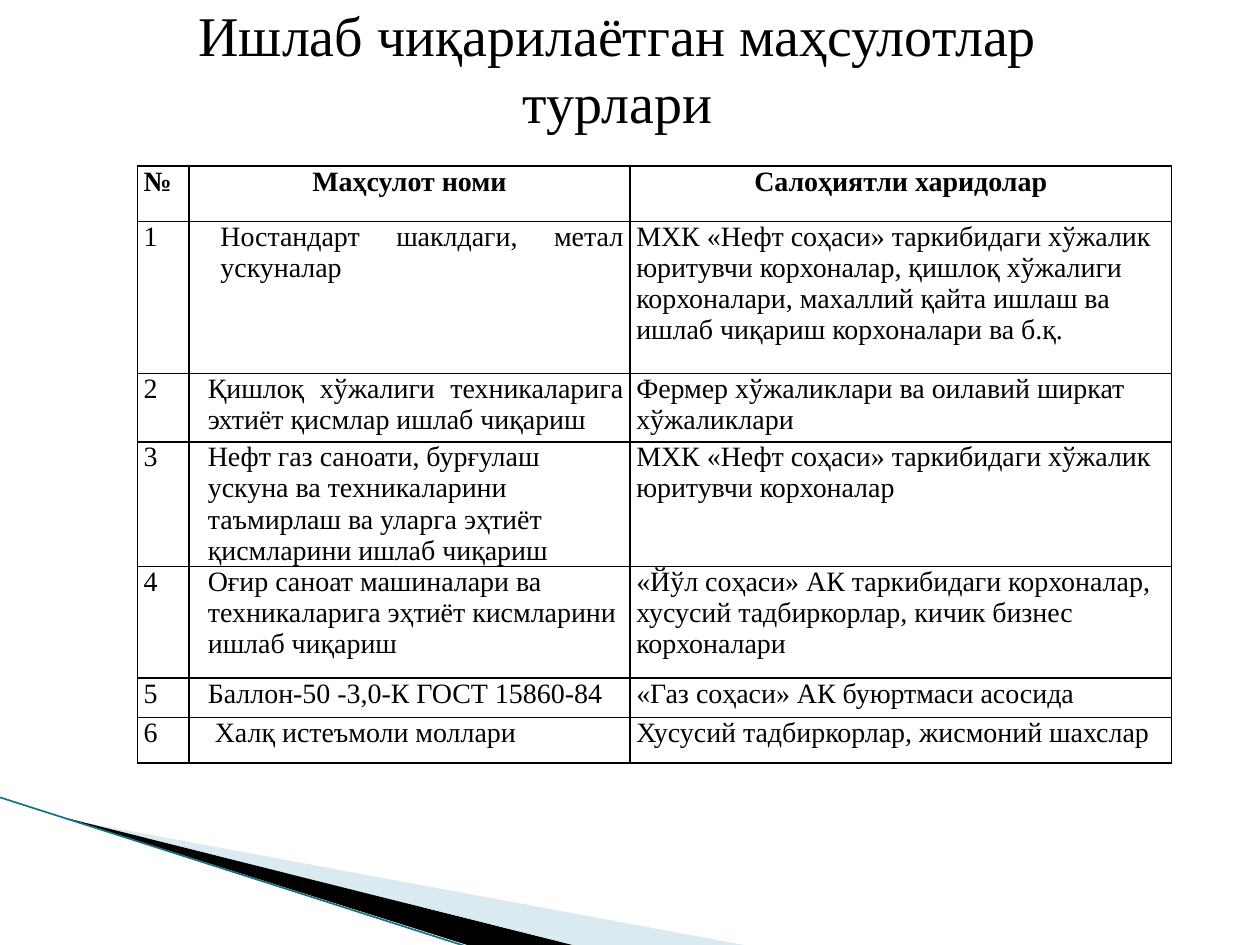
"""Build a slide with a table of products and their potential buyers."""
import pptx
import pptx.dml.color
import pptx.enum.shapes
import pptx.enum.text
import pptx.oxml
import pptx.oxml.ns
import pptx.util

Pt = pptx.util.Pt
RGBColor = pptx.dml.color.RGBColor
ALIGN = pptx.enum.text.PP_ALIGN
BLACK = RGBColor(0x00, 0x00, 0x00)
WHITE = RGBColor(0xFF, 0xFF, 0xFF)
PALE_BLUE = RGBColor(0xA0, 0xCB, 0xDC)
TEAL = RGBColor(0x17, 0x70, 0x8A)
NAMESPACE = pptx.oxml.ns.nsdecls("a")

COLUMN_WIDTHS = (29.5, 252, 309.5)
ROW_HEIGHTS = (31.5, 87, 39, 58, 64, 22.5, 26)
HEADINGS = ("№", "Маҳсулот номи", "Салоҳиятли харидолар")
PRODUCTS = (
    ("Ностандарт шаклдаги, метал ускуналар", ALIGN.JUSTIFY, 14.4,
     "МХК «Нефт соҳаси» таркибидаги хўжалик юритувчи корхоналар, "
     "қишлоқ хўжалиги корхоналари, махаллий қайта ишлаш ва "
     "ишлаб чиқариш корхоналари ва б.қ."),
    ("Қишлоқ хўжалиги техникаларига эхтиёт қисмлар ишлаб чиқариш",
     ALIGN.JUSTIFY, 7.2, "Фермер хўжаликлари ва оилавий ширкат хўжаликлари"),
    ("Нефт газ саноати, бурғулаш ускуна ва техникаларини таъмирлаш "
     "ва уларга эҳтиёт қисмларини ишлаб чиқариш", ALIGN.LEFT, 7.2,
     "МХК «Нефт соҳаси» таркибидаги хўжалик юритувчи корхоналар"),
    ("Оғир саноат машиналари ва техникаларига эҳтиёт кисмларини "
     "ишлаб чиқариш", ALIGN.LEFT, 7.2,
     "«Йўл соҳаси» АК таркибидаги корхоналар,\n"
     "хусусий тадбиркорлар, кичик бизнес корхоналари"),
    ("Баллон-50 -3,0-К ГОСТ 15860-84", ALIGN.LEFT, 7.2,
     "«Газ соҳаси» АК буюртмаси асосида"),
    ("Халқ истеъмоли моллари", ALIGN.JUSTIFY, 11.2,
     "Хусусий тадбиркорлар, жисмоний шахслар"),
)


class SlideBuilder:
    """Hold the text style and the current slide."""

    font_name = "Times New Roman"
    title_size = 32
    table_size = 16

    def __init__(self, slide):
        self.slide = slide

    def format_text(self, text_frame, size, align, bold=False, indent=0):
        """Apply the shared style to every paragraph."""
        for paragraph in text_frame.paragraphs:
            paragraph.alignment = align
            if indent:
                properties = paragraph._p.get_or_add_pPr()
                properties.set("marL", str(Pt(indent)))
                properties.set("indent", "0")
            for run in paragraph.runs:
                run.font.name = self.font_name
                run.font.size = Pt(size)
                run.font.bold = bold
                run.font.color.rgb = BLACK

    def add_title(self, text, left, top, width, height):
        """Place and format the title placeholder."""
        title = self.slide.shapes.title
        title.left, title.top = Pt(left), Pt(top)
        title.width, title.height = Pt(width), Pt(height)
        title.text_frame.text = text
        title.text_frame.word_wrap = True
        title.text_frame.auto_size = pptx.enum.text.MSO_AUTO_SIZE.NONE
        title.text_frame.vertical_anchor = pptx.enum.text.MSO_ANCHOR.MIDDLE
        self.format_text(title.text_frame, self.title_size, ALIGN.CENTER)

    def add_wedge(self, points, color, opacity=100):
        """Draw a filled outline without a border."""
        corners = [(Pt(x), Pt(y)) for x, y in points]
        builder = self.slide.shapes.build_freeform(*corners[0], scale=1.0)
        builder.add_line_segments(corners[1:], close=True)
        shape = builder.convert_to_shape()
        shape.shadow.inherit = False
        shape.fill.solid()
        shape.fill.fore_color.rgb = color
        shape.line.fill.background()
        if opacity < 100:
            color_element = shape._element.spPr.find(
                ".//" + pptx.oxml.ns.qn("a:srgbClr"))
            color_element.append(pptx.oxml.parse_xml(
                f'<a:alpha {NAMESPACE} val="{opacity * 1000}"/>'))

    def add_line(self, start, end, color, width):
        """Draw a straight line."""
        connector = self.slide.shapes.add_connector(
            pptx.enum.shapes.MSO_CONNECTOR.STRAIGHT,
            *(Pt(value) for value in (*start, *end)))
        connector.line.color.rgb = color
        connector.line.width = Pt(width)
        connector._element.spPr.append(
            pptx.oxml.parse_xml(f"<a:effectLst {NAMESPACE}/>"))

    def add_table(self, left, top, widths, heights):
        """Add an unbanded table with the given columns and rows."""
        table = self.slide.shapes.add_table(
            len(heights), len(widths), Pt(left), Pt(top),
            Pt(sum(widths)), Pt(sum(heights))).table
        table.first_row = table.horz_banding = False
        for column, width in zip(table.columns, widths):
            column.width = Pt(width)
        for row, height in zip(table.rows, heights):
            row.height = Pt(height)
        return table

    def fill_cell(self, cell, text, align=ALIGN.LEFT, bold=False, indent=0):
        """Write a cell and give it a border on each side."""
        cell.margin_left = cell.margin_right = Pt(3.6)
        cell.margin_top = cell.margin_bottom = 0
        for side in "LRTB":
            cell._tc.get_or_add_tcPr().append(pptx.oxml.parse_xml(
                f'<a:ln{side} {NAMESPACE} w="{Pt(1)}"><a:solidFill>'
                f'<a:srgbClr val="{BLACK}"/></a:solidFill></a:ln{side}>'))
        cell.fill.solid()
        cell.fill.fore_color.rgb = WHITE
        cell.text_frame.text = text
        self.format_text(cell.text_frame, self.table_size, align, bold, indent)


def main():
    """Build and save the presentation."""
    presentation = pptx.Presentation()
    presentation.slide_width, presentation.slide_height = Pt(720), Pt(540)
    slide = presentation.slides.add_slide(presentation.slide_layouts[5])
    builder = SlideBuilder(slide)

    builder.add_wedge(((39.6, 468.5), (425, 540), (328, 540), (39.6, 468)),
                      PALE_BLUE, opacity=40)
    builder.add_wedge(((38, 467.5), (327, 540), (267, 540), (39, 468)), BLACK)
    builder.add_line((-0.5, 455.5), (267, 541), TEAL, 0.95)
    builder.add_title("Ишлаб чиқарилаётган маҳсулотлар турлари",
                      56, 13.5, 594, 50)

    table = builder.add_table(78.5, 95, COLUMN_WIDTHS, ROW_HEIGHTS)
    for column, heading in enumerate(HEADINGS):
        align = ALIGN.CENTER if column else ALIGN.LEFT
        builder.fill_cell(table.cell(0, column), heading, align, bold=True)
    for row, (product, align, indent, buyers) in enumerate(PRODUCTS, 1):
        builder.fill_cell(table.cell(row, 0), str(row))
        builder.fill_cell(table.cell(row, 1), product, align, indent=indent)
        builder.fill_cell(table.cell(row, 2), buyers)

    presentation.save("out.pptx")


if __name__ == "__main__":
    main()
